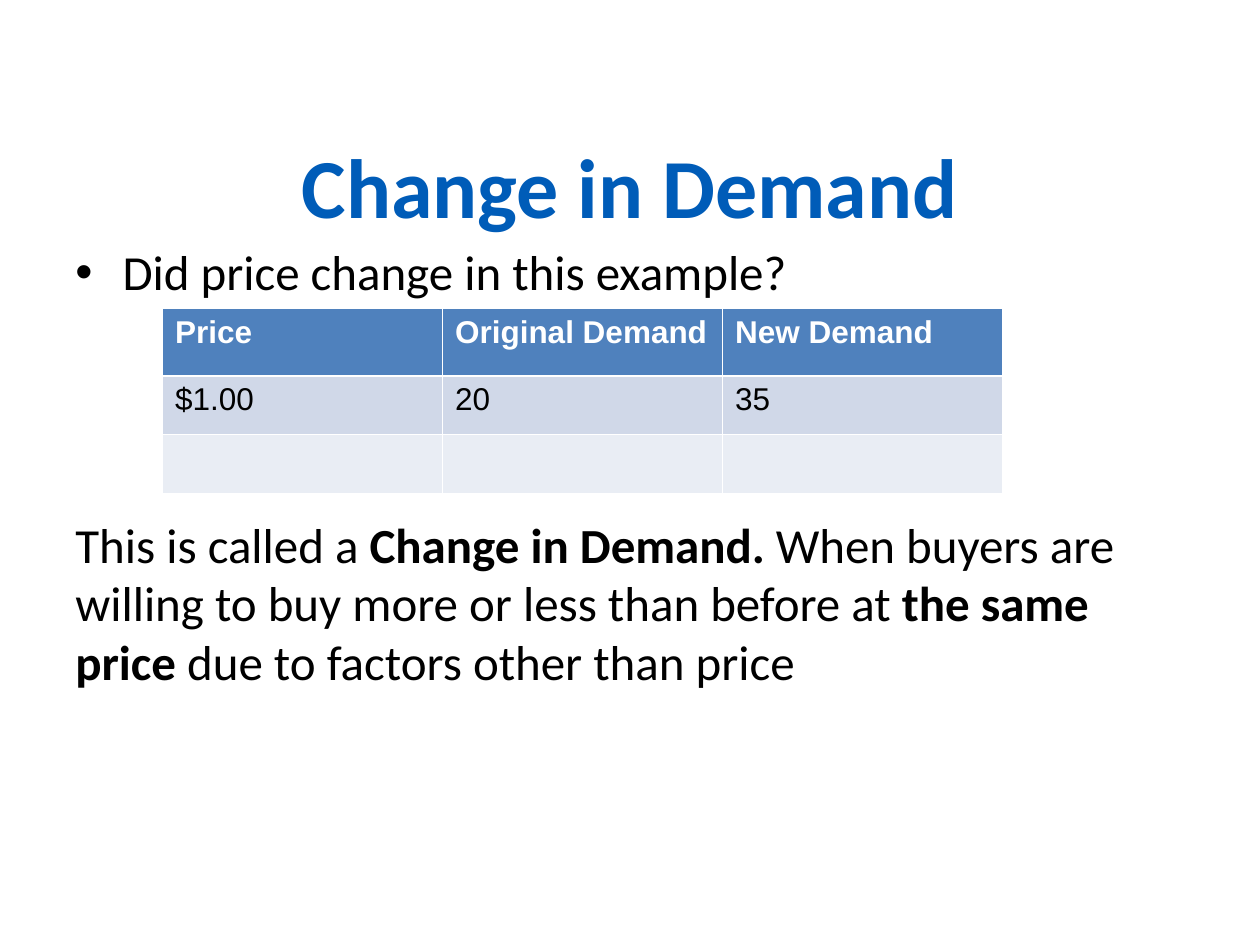
from dataclasses import dataclass

from lxml import etree
from pptx import Presentation
from pptx.dml.color import RGBColor
from pptx.enum import text
from pptx.oxml import ns
from pptx.util import Pt


@dataclass(frozen=True)
class Theme:
    blue: RGBColor = RGBColor(0x00, 0x5C, 0xB8)
    black: RGBColor = RGBColor(0, 0, 0)
    white: RGBColor = RGBColor(255, 255, 255)
    header: RGBColor = RGBColor(0x4F, 0x81, 0xBD)
    bands: tuple = (RGBColor(0xD0, 0xD8, 0xE8), RGBColor(0xE9, 0xED, 0xF4))
    text_font: str = "Calibri"
    table_font: str = "Arial"
    title_size: int = 48
    body_size: int = 28
    table_size: int = 18


THEME = Theme()
LEFT, WIDTH = 36, 648


def format_para(para, name, size, color, bold=None):
    font = para.font
    font.name, font.size, font.bold = name, Pt(size), bold
    font.color.rgb = color


def add_bullet(para, indent):
    props = para._p.get_or_add_pPr()
    props.set("marL", str(Pt(indent)))
    props.set("indent", str(-Pt(indent)))
    font = etree.SubElement(props, ns.qn("a:buFont"))
    font.set("typeface", "Arial")
    etree.SubElement(props, ns.qn("a:buChar")).set("char", "•")


def set_title(page, words):
    title = page.shapes.title
    title.left, title.top = Pt(LEFT), Pt(77)
    title.width, title.height = Pt(WIDTH), Pt(57.6)
    frame = title.text_frame
    frame.text = words
    frame.vertical_anchor = text.MSO_ANCHOR.MIDDLE
    para = frame.paragraphs[0]
    para.alignment = text.PP_ALIGN.CENTER
    para.line_spacing = Pt(57)
    format_para(para, THEME.text_font, THEME.title_size, THEME.blue, True)


def add_body(page, question, answer, answer_gap):
    box = page.shapes.add_textbox(Pt(LEFT), Pt(134.6), Pt(WIDTH), Pt(350))
    frame = box.text_frame
    frame.word_wrap = True

    first = frame.paragraphs[0]
    first.text = question
    add_bullet(first, 27)

    # The answer starts below the table
    second = frame.add_paragraph()
    second.space_before = Pt(answer_gap)
    for words, bold in answer:
        span = second.add_run()
        span.text = words
        span.font.bold = bold

    for para in frame.paragraphs:
        format_para(para, THEME.text_font, THEME.body_size, THEME.black)


def add_demand_table(page, rows, heights):
    columns = len(rows[0])
    frame = page.shapes.add_table(len(rows), columns, Pt(92.9), Pt(176.4),
                                  Pt(160 * columns), Pt(sum(heights)))
    table = frame.table
    for r, (values, height) in enumerate(zip(rows, heights)):
        table.rows[r].height = Pt(height)
        is_header = r == 0
        fill = THEME.header if is_header else THEME.bands[(r - 1) % 2]
        color = THEME.white if is_header else THEME.black
        for c, value in enumerate(values):
            cell = table.cell(r, c)
            cell.text = value
            cell.fill.solid()
            cell.fill.fore_color.rgb = fill
            format_para(cell.text_frame.paragraphs[0], THEME.table_font,
                        THEME.table_size, color, is_header)


def main():
    deck = Presentation()
    deck.slide_width, deck.slide_height = Pt(720), Pt(540)
    page = deck.slides.add_slide(deck.slide_layouts[5])

    # Heading
    set_title(page, "Change in Demand")

    # Question and definition
    add_body(page, "Did price change in this example?", [
        ("This is called a ", False),
        ("Change in Demand. ", True),
        ("When buyers are willing to buy more or less than before at ", False),
        ("the same price", True),
        (" due to factors other than price", False),
    ], answer_gap=122)

    # Demand at one price
    add_demand_table(page, [
        ("Price", "Original Demand", "New Demand"),
        ("$1.00", "20", "35"),
        ("", "", ""),
    ], heights=(38.4, 33.6, 33.6))

    deck.save("out.pptx")


if __name__ == "__main__":
    main()
